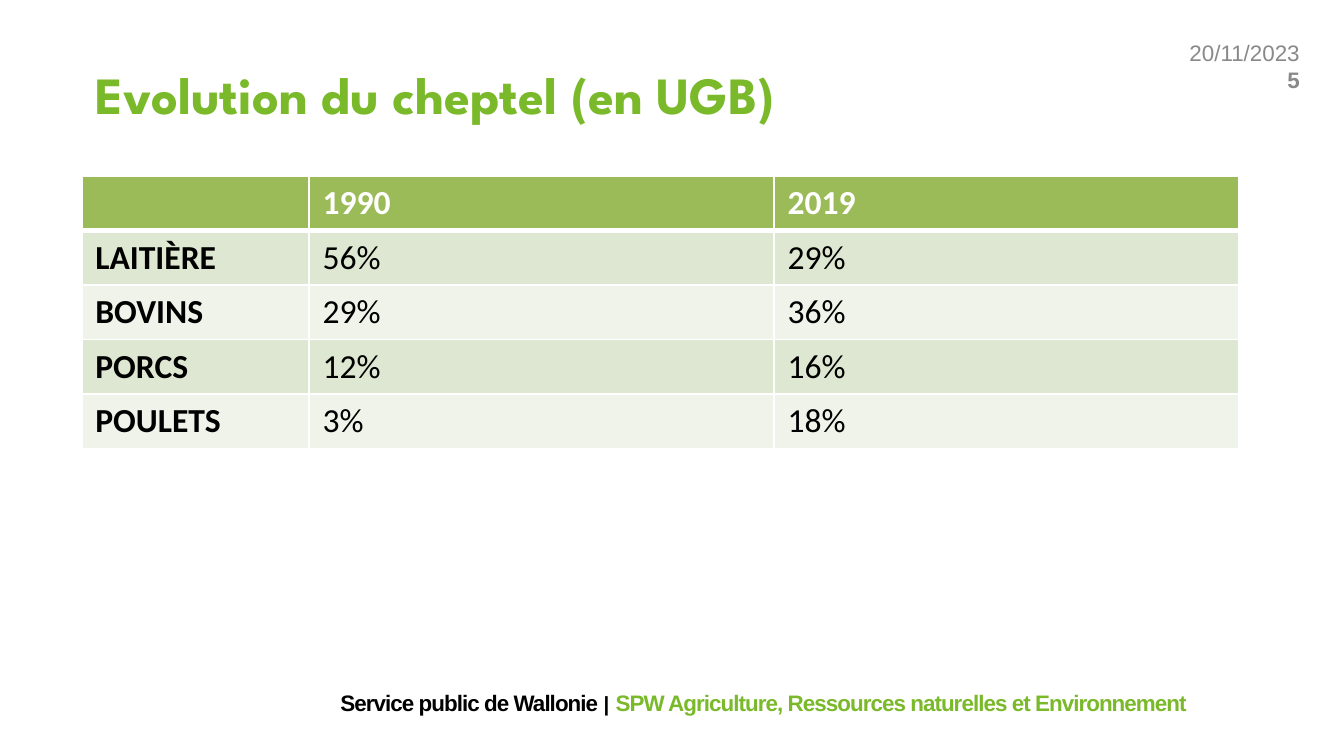
import pptx
import pptx.dml.color
import pptx.enum.text
import pptx.oxml.ns
import pptx.util
from lxml import etree
from pptx.util import Inches

RGBColor = pptx.dml.color.RGBColor
ALIGN = pptx.enum.text.PP_ALIGN
ANCHOR = pptx.enum.text.MSO_ANCHOR

GREEN = RGBColor(0x7A, 0xB9, 0x29)
GREY = RGBColor(0x89, 0x89, 0x89)
BLACK = RGBColor(0, 0, 0)
WHITE = RGBColor(255, 255, 255)
HEADER = RGBColor(0x9B, 0xBB, 0x59)
BANDS = (RGBColor(0xDE, 0xE7, 0xD1), RGBColor(0xEF, 0xF3, 0xEA))

ROWS = (
    ("", "1990", "2019"),
    ("LAITIÈRE", "56%", "29%"),
    ("BOVINS", "29%", "36%"),
    ("PORCS", "12%", "16%"),
    ("POULETS", "3%", "18%"),
)
COLUMN_WIDTHS = (1.69, 3.46, 3.46)
TABLE_HEIGHT = 2.03


def add_run(p, text, color, size, name="Arial", bold=False, spacing=None):
    """Append a formatted run to a paragraph."""
    r = p.add_run()
    r.text = text
    r.font.color.rgb = color
    font_format = {"size": pptx.util.Pt(size), "name": name, "bold": bold}
    for key, value in font_format.items():
        setattr(r.font, key, value)
    if spacing is not None:
        r.font._element.set("spc", str(round(spacing * 100)))


def add_text(s, box, paragraphs, align=ALIGN.LEFT, anchor=ANCHOR.TOP):
    """Add a wrapped text box whose paragraphs are lists of run formats."""
    tf = s.shapes.add_textbox(*map(Inches, box)).text_frame
    for key, value in {"word_wrap": True, "vertical_anchor": anchor}.items():
        setattr(tf, key, value)
    for i, runs in enumerate(paragraphs):
        p = tf.add_paragraph() if i else tf.paragraphs[0]
        p.alignment = align
        for run in runs:
            add_run(p, **run)


def set_border(cell, side, width):
    """Draw one white border of a cell."""
    qn = pptx.oxml.ns.qn
    tc_pr = cell._tc.get_or_add_tcPr()
    ln = etree.SubElement(tc_pr, qn(f"a:ln{side}"), w=str(pptx.util.Pt(width)))
    fill = etree.SubElement(ln, qn("a:solidFill"))
    etree.SubElement(fill, qn("a:srgbClr"), val=str(WHITE))


def add_herd_table(s):
    """Add the herd table with its header row and banded body rows."""
    box = map(Inches, (0.61, 1.31, sum(COLUMN_WIDTHS), TABLE_HEIGHT))
    table = s.shapes.add_table(len(ROWS), len(COLUMN_WIDTHS), *box).table
    for column, width in zip(table.columns, COLUMN_WIDTHS):
        column.width = Inches(width)
    for i, values in enumerate(ROWS):
        table.rows[i].height = Inches(TABLE_HEIGHT / len(ROWS))
        for j, value in enumerate(values):
            cell = table.cell(i, j)
            widths = {"L": 1, "R": 1, "T": 3 if i == 1 else 1, "B": 3 if i == 0 else 1}
            for side, width in widths.items():
                set_border(cell, side, width)
            cell.fill.solid()
            cell.fill.fore_color.rgb = BANDS[(i - 1) % 2] if i else HEADER
            if value:
                p = cell.text_frame.paragraphs[0]
                color = BLACK if i else WHITE
                add_run(p, value, color, 18, "Calibri", i == 0 or j == 0)


def main():
    """Build the slide and save it."""
    prs = pptx.Presentation()
    prs.slide_width = Inches(10)
    prs.slide_height = prs.slide_width * 9 // 16
    s = prs.slides.add_slide(prs.slide_layouts[6])

    date = {"text": "20/11/2023", "color": GREY, "size": 12}
    number = {**date, "text": "5", "bold": True}
    add_text(s, (7.8, 0.24, 1.97, 0.59), [[date], [number]], ALIGN.RIGHT)

    service = {"text": "Service public de Wallonie ", "color": BLACK,
               "size": 12, "bold": True, "spacing": -0.5}
    department = "SPW Agriculture, Ressources naturelles et Environnement"
    footer = [
        service,
        {**service, "text": "|", "size": 11},
        {**service, "text": " "},
        {**service, "text": department, "color": GREEN},
    ]
    add_text(s, (0.11, 5.08, 8.82, 0.3), [footer], ALIGN.RIGHT, ANCHOR.MIDDLE)

    title = {"text": "Evolution du cheptel (en UGB)", "color": GREEN,
             "size": 28, "name": "League Spartan", "bold": True}
    add_text(s, (0.61, 0.23, 8.6, 0.94), [[title]], anchor=ANCHOR.MIDDLE)
    add_herd_table(s)
    prs.save("out.pptx")


if __name__ == "__main__":
    main()
